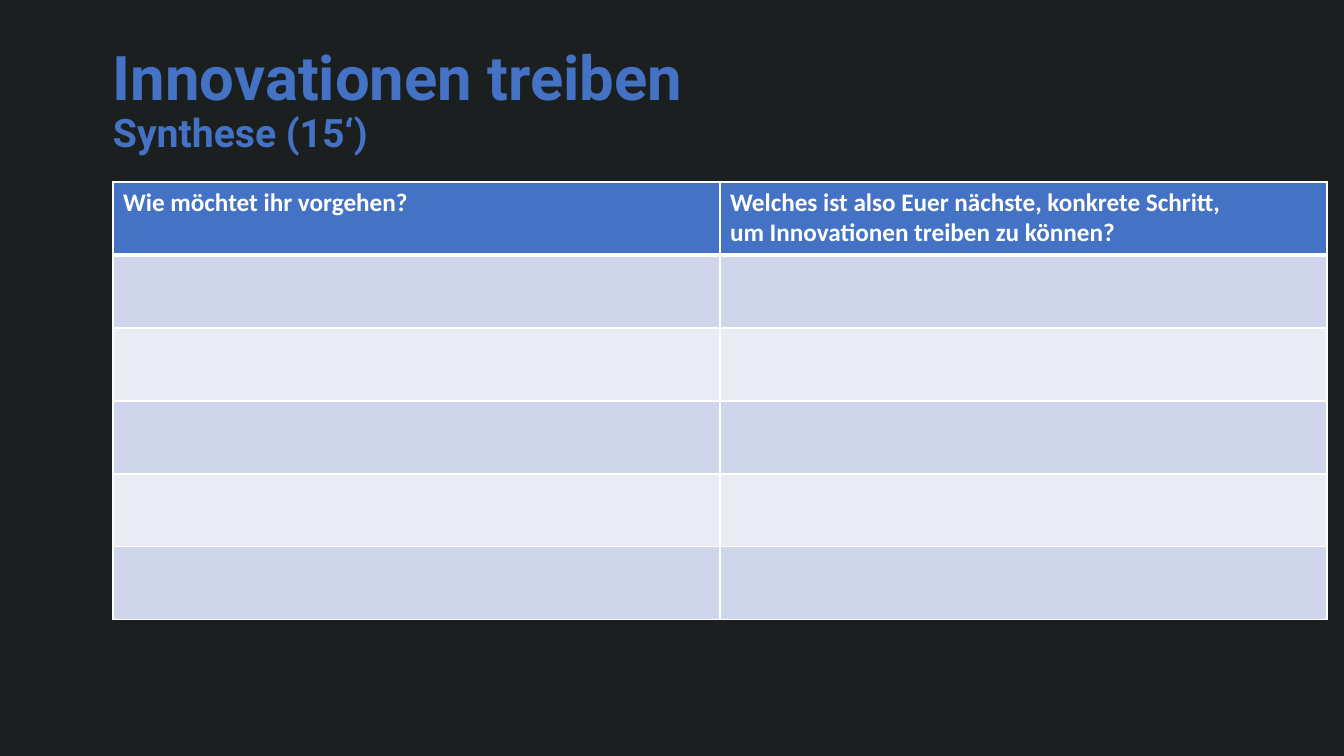
from lxml import etree
from pptx import Presentation, util as u
from pptx.dml.color import RGBColor
from pptx.enum import text
from pptx.oxml.ns import qn

PX = 914400 / 100.8


def px(length):
    return u.Emu(round(length * PX))


def style_run(run, size, font, color):
    run.font.size = u.Pt(size)
    run.font.name = font
    run.font.bold = True
    run.font.color.rgb = RGBColor.from_string(color)


BLUE, WHITE = "4472C4", "FFFFFF"
BANDS = ["E9EBF5", "CFD5EA"]

prs = Presentation()
prs.slide_width, prs.slide_height = px(1344), px(756)
slide = prs.slides.add_slide(prs.slide_layouts[5])

# Dark background
slide.background.fill.solid()
slide.background.fill.fore_color.rgb = RGBColor.from_string("1C1F20")

# Title and subtitle; the bottom inset lifts them clear of the table
title = slide.shapes.title
title.left, title.top, title.width, title.height = px(113), px(79), px(1137), px(123)
heading = title.text_frame
heading.word_wrap = True
heading.auto_size = text.MSO_AUTO_SIZE.NONE
heading.vertical_anchor = text.MSO_ANCHOR.BOTTOM
heading.margin_left = heading.margin_top = heading.margin_right = 0
heading.margin_bottom = px(46)
line = heading.paragraphs[0]
line.alignment = text.PP_ALIGN.LEFT
line.line_spacing = 0.9
topic = line.add_run()
topic.text = "Innovationen treiben"
style_run(topic, 44, "Roboto", BLUE)
line.add_line_break()
phase = line.add_run()
phase.text = "Synthese (15‘)"
style_run(phase, 28, "Roboto", BLUE)

# Table with a header and five empty rows to fill in
ROWS, COLS, ROW_H, COL_W = 6, 2, 73, 607
questions = slide.shapes.add_table(
    ROWS, COLS, px(113), px(182), px(COLS * COL_W), px(ROWS * ROW_H)).table
for column in questions.columns:
    column.width = px(COL_W)
for r, row in enumerate(questions.rows):
    row.height = px(ROW_H)
    for cell in row.cells:
        # White borders, thicker below the header
        for side in ("lnL", "lnR", "lnT", "lnB"):
            thick = (r, side) in ((0, "lnB"), (1, "lnT"))
            border = etree.SubElement(cell._tc.get_or_add_tcPr(), qn("a:" + side),
                                      w=str(u.Pt(3 if thick else 1)))
            paint = etree.SubElement(border, qn("a:solidFill"))
            etree.SubElement(paint, qn("a:srgbClr"), val=WHITE)
        cell.fill.solid()
        cell.fill.fore_color.rgb = RGBColor.from_string(BANDS[r % 2] if r else BLUE)

# Header questions
headers = [
    ["Wie möchtet ihr vorgehen?"],
    ["Welches ist also Euer nächste, konkrete Schritt,",
     "um Innovationen treiben zu können?"],
]
for c, lines in enumerate(headers):
    question = questions.cell(0, c).text_frame.paragraphs[0]
    for i, words in enumerate(lines):
        if i:
            question.add_line_break()
        run = question.add_run()
        run.text = words
        style_run(run, 18, "Calibri", WHITE)

prs.save("out.pptx")
